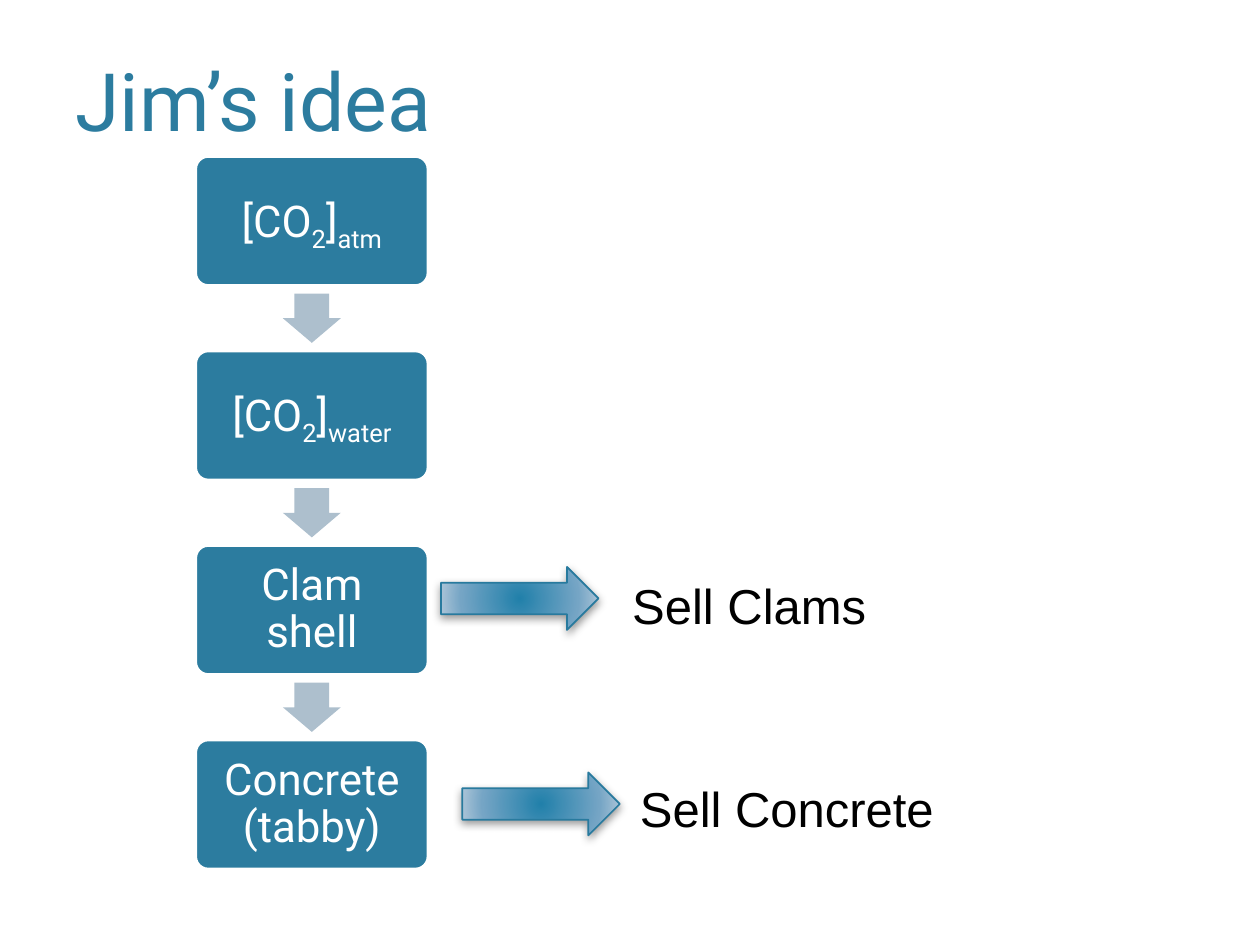
from lxml.etree import SubElement
from pptx import Presentation
from pptx.dml.color import RGBColor
from pptx.enum.shapes import MSO_SHAPE
from pptx.enum.text import MSO_ANCHOR, MSO_AUTO_SIZE, PP_ALIGN
from pptx.oxml import parse_xml
from pptx.oxml.ns import nsdecls, qn
from pptx.util import Pt

TEAL = RGBColor(0x2C, 0x7C, 0x9F)
OUTLINE = RGBColor(0x28, 0x7A, 0x9E)
GRAY_BLUE = RGBColor(0xAD, 0xBF, 0xCD)
WHITE = RGBColor(0xFF, 0xFF, 0xFF)
BLACK = RGBColor(0, 0, 0)
GRADIENT_STOPS = [(0, "2180AA"), (69, "75A5C5"), (100, "B8CCDC")]

# Column of steps
BOX_LEFT, BOX_TOP = 111.6, 89.2
BOX_WIDTH, BOX_HEIGHT = 133.2, 74.2
STEP = 111.15
ARROW_LENGTH, ARROW_BREADTH = 28.1, 33.1

# Each step is a list of (text, is subscript)
STEPS = [
    [("[CO", False), ("2", True), ("]", False), ("atm", True)],
    [("[CO", False), ("2", True), ("]", False), ("water", True)],
    [("Clam shell", False)],
    [("Concrete (tabby)", False)],
]

# Product text, arrow left and top, label left, top and width
PRODUCTS = [
    ("Sell Clams", 252, 324, 354.2, 325.4, 149.8),
    ("Sell Concrete", 264.2, 441.4, 358.6, 441.4, 192.2),
]


def add_run(paragraph, text, font_name, size, color, subscript=False):
    run = paragraph.add_run()
    run.text = text
    run.font.name = font_name
    run.font.size = Pt(size)
    run.font.color.rgb = color
    if subscript:
        run.font._element.set("baseline", "-25000")


def add_label(slide, text, left, top, width, height, font_name, size, color):
    label = slide.shapes.add_textbox(Pt(left), Pt(top), Pt(width), Pt(height))
    label.text_frame.word_wrap = True
    add_run(label.text_frame.paragraphs[0], text, font_name, size, color)
    return label.text_frame


def add_shape(slide, kind, left, top, width, height):
    shape = slide.shapes.add_shape(kind, Pt(left), Pt(top), Pt(width), Pt(height))
    shape.shadow.inherit = False
    return shape


def add_step_box(slide, top, parts):
    box = add_shape(slide, MSO_SHAPE.ROUNDED_RECTANGLE,
                    BOX_LEFT, top, BOX_WIDTH, BOX_HEIGHT)
    box.adjustments[0] = 0.1
    box.fill.solid()
    box.fill.fore_color.rgb = TEAL
    box.line.color.rgb = WHITE
    box.line.width = Pt(2)
    frame = box.text_frame
    frame.word_wrap = True
    frame.vertical_anchor = MSO_ANCHOR.MIDDLE
    frame.margin_left = frame.margin_right = Pt(9)
    frame.margin_top = frame.margin_bottom = Pt(9)
    paragraph = frame.paragraphs[0]
    paragraph.alignment = PP_ALIGN.CENTER
    paragraph.line_spacing = 0.9
    for text, subscript in parts:
        add_run(paragraph, text, "Roboto", 25, WHITE, subscript)


def add_down_arrow(slide, box_top):
    """Centre a downward arrow in the gap below a step box."""
    center_x = BOX_LEFT + BOX_WIDTH / 2
    center_y = box_top + (BOX_HEIGHT + STEP) / 2
    arrow = add_shape(slide, MSO_SHAPE.RIGHT_ARROW,
                      center_x - ARROW_LENGTH / 2, center_y - ARROW_BREADTH / 2,
                      ARROW_LENGTH, ARROW_BREADTH)
    arrow.rotation = 90
    arrow.adjustments[0] = 0.6
    arrow.adjustments[1] = 0.5
    arrow.fill.solid()
    arrow.fill.fore_color.rgb = GRAY_BLUE
    arrow.line.fill.background()


def add_product_arrow(slide, left, top):
    arrow = add_shape(slide, MSO_SHAPE.RIGHT_ARROW, left, top, 90, 36)
    arrow.line.color.rgb = OUTLINE
    arrow.line.width = Pt(1)

    # Radial gradient
    arrow.fill.background()
    properties = arrow._element.spPr
    stops = "".join(
        f'<a:gs pos="{position * 1000}"><a:srgbClr val="{color}"/></a:gs>'
        for position, color in GRADIENT_STOPS)
    gradient = parse_xml(
        f'<a:gradFill {nsdecls("a")} rotWithShape="1"><a:gsLst>{stops}</a:gsLst>'
        '<a:path path="circle"><a:fillToRect l="100000" t="100000" '
        'r="100000" b="100000"/></a:path></a:gradFill>')
    properties.replace(properties.find(qn("a:noFill")), gradient)

    # Soft shadow below
    shadow = SubElement(properties.find(qn("a:effectLst")), qn("a:outerShdw"),
                        blurRad=str(Pt(5)), dist=str(Pt(2)), dir="5400000",
                        rotWithShape="0")
    color = SubElement(shadow, qn("a:srgbClr"), val="000000")
    SubElement(color, qn("a:alpha"), val="40000")


def main():
    presentation = Presentation()
    presentation.slide_width = Pt(720)
    presentation.slide_height = Pt(540)
    slide = presentation.slides.add_slide(presentation.slide_layouts[6])

    # Title
    title = add_label(slide, "Jim’s idea", 36, 12.2, 604.8, 75.6,
                      "Roboto", 46, TEAL)
    title.vertical_anchor = MSO_ANCHOR.BOTTOM

    # Steps, with an arrow between each pair
    for index, parts in enumerate(STEPS):
        top = BOX_TOP + index * STEP
        add_step_box(slide, top, parts)
        if index < len(STEPS) - 1:
            add_down_arrow(slide, top)

    # Products to sell
    for text, arrow_left, arrow_top, left, top, width in PRODUCTS:
        add_product_arrow(slide, arrow_left, arrow_top)
        label = add_label(slide, text, left, top, width, 41, "Arial", 28, BLACK)
        label.auto_size = MSO_AUTO_SIZE.SHAPE_TO_FIT_TEXT

    presentation.save("out.pptx")


if __name__ == "__main__":
    main()
